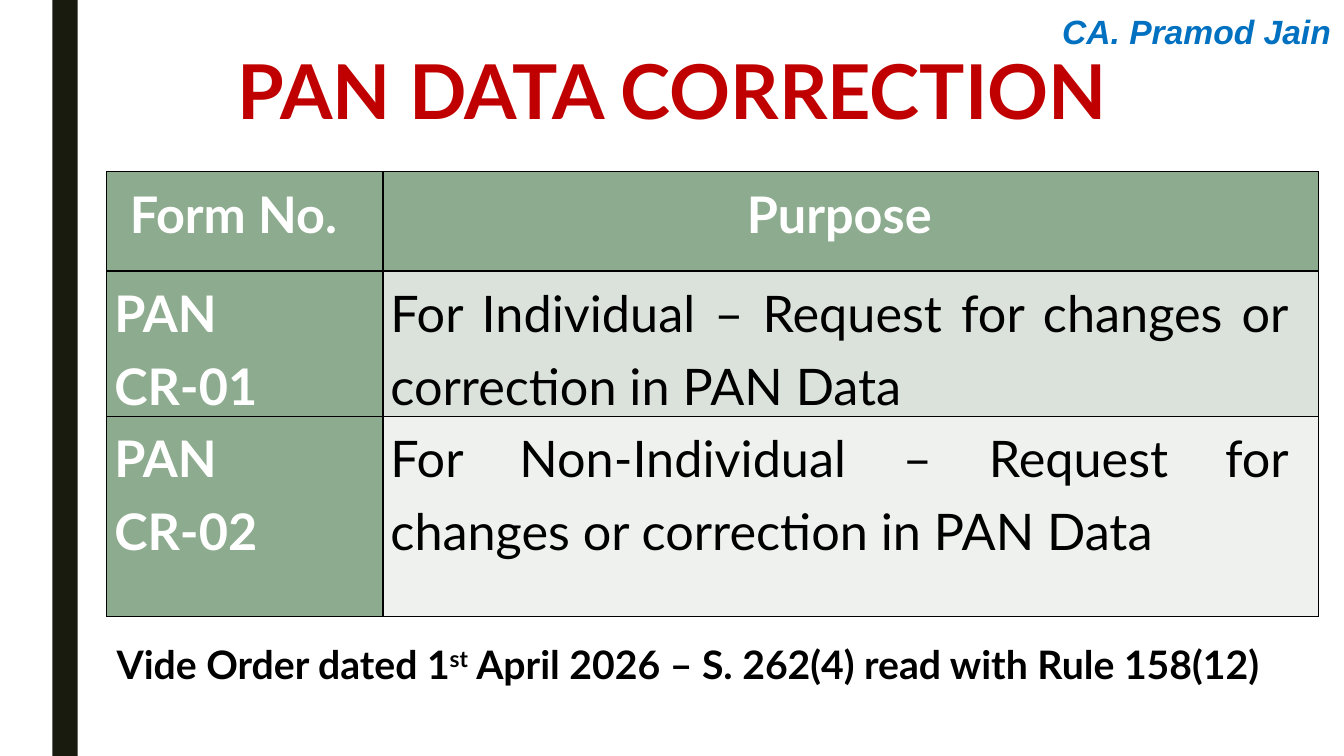
from lxml import etree
from pptx import Presentation
from pptx.dml.color import RGBColor
from pptx.enum.shapes import MSO_SHAPE
from pptx.enum.text import MSO_ANCHOR, PP_ALIGN
from pptx.oxml.ns import qn
from pptx.util import Cm, Pt

RECTANGLE = MSO_SHAPE.RECTANGLE
TOP, MIDDLE = MSO_ANCHOR.TOP, MSO_ANCHOR.MIDDLE
LEFT, CENTER = PP_ALIGN.LEFT, PP_ALIGN.CENTER
RIGHT, JUSTIFY = PP_ALIGN.RIGHT, PP_ALIGN.JUSTIFY

BLACK = RGBColor(0x00, 0x00, 0x00)
WHITE = RGBColor(0xFF, 0xFF, 0xFF)
DARK_OLIVE = RGBColor(0x19, 0x1B, 0x0E)
BLUE = RGBColor(0x00, 0x70, 0xC0)
RED = RGBColor(0xC0, 0x00, 0x00)
GREEN = RGBColor(0x8D, 0xAB, 0x8E)
BAND_COLORS = [RGBColor(0xDB, 0xE2, 0xDB), RGBColor(0xEE, 0xF1, 0xEE)]

FORMS = [
    ("Form No.", "Purpose"),
    ("PAN CR-01", "For Individual – Request for changes or correction in PAN Data"),
    ("PAN CR-02", "For Non-Individual – Request for changes or correction in PAN Data"),
]
COLUMN_WIDTHS = [Cm(6.96), Cm(23.57)]
ROW_HEIGHTS = [Cm(2.51), Cm(3.12), Cm(5.05)]


def add_run(paragraph, text, size, color, font="Lato", bold=True, italic=False):
    run = paragraph.add_run()
    run.text = text
    run.font.name = font
    run.font.size = Pt(size)
    run.font.bold = bold
    run.font.italic = italic
    run.font.color.rgb = color
    return run


def place(shape, left, top, width, height):
    shape.left, shape.top, shape.width, shape.height = left, top, width, height


def first_paragraph(shape, alignment, anchor=TOP):
    frame = shape.text_frame
    frame.word_wrap = True
    frame.vertical_anchor = anchor
    paragraph = frame.paragraphs[0]
    paragraph.alignment = alignment
    return paragraph


def add_side_bar(slide, height):
    bar = slide.shapes.add_shape(RECTANGLE, Cm(1.32), 0, Cm(0.64), height)
    bar.shadow.inherit = False
    bar.fill.solid()
    bar.fill.fore_color.rgb = DARK_OLIVE
    bar.line.fill.background()


def set_borders(cell, color, width):
    properties = cell._tc.get_or_add_tcPr()
    for index, side in enumerate(("lnL", "lnR", "lnT", "lnB")):
        line = etree.Element(qn(f"a:{side}"), w=str(width))
        fill = etree.SubElement(line, qn("a:solidFill"))
        etree.SubElement(fill, qn("a:srgbClr"), val=str(color))
        properties.insert(index, line)


def fill_cell(cell, text, alignment, background, color, bold):
    cell.margin_left, cell.margin_right = Cm(0.19), Cm(0.76)
    cell.margin_top = cell.margin_bottom = 0
    cell.fill.solid()
    cell.fill.fore_color.rgb = background
    set_borders(cell, BLACK, Pt(1))
    paragraph = cell.text_frame.paragraphs[0]
    paragraph.alignment = alignment
    paragraph.line_spacing = 1.2
    paragraph.space_after = Pt(1)
    add_run(paragraph, text, 36, color, bold=bold)


def add_forms_table(slide):
    table = slide.shapes.add_table(
        len(FORMS), len(COLUMN_WIDTHS), Cm(2.69), Cm(4.32),
        sum(COLUMN_WIDTHS), sum(ROW_HEIGHTS)).table
    for column, width in zip(table.columns, COLUMN_WIDTHS):
        column.width = width
    for row_index, texts in enumerate(FORMS):
        table.rows[row_index].height = ROW_HEIGHTS[row_index]
        alignment = JUSTIFY if row_index else CENTER
        for column_index, text in enumerate(texts):
            is_body = row_index > 0 and column_index > 0
            background = BAND_COLORS[row_index - 1] if is_body else GREEN
            color = BLACK if is_body else WHITE
            fill_cell(table.cell(row_index, column_index), text, alignment,
                      background, color, not is_body)


def main():
    presentation = Presentation()
    presentation.slide_width, presentation.slide_height = Cm(33.87), Cm(19.05)
    slide = presentation.slides.add_slide(presentation.slide_layouts[5])
    add_side_bar(slide, presentation.slide_height)

    # Author
    author = slide.shapes.add_textbox(Cm(25.1), Cm(0.15), Cm(8.69), Cm(1.07))
    add_run(first_paragraph(author, RIGHT), "CA. Pramod Jain", 24, BLUE,
            font="Arial", italic=True)

    # Title
    title = slide.shapes.title
    place(title, Cm(4.24), Cm(1.07), Cm(25.4), Cm(2.34))
    add_run(first_paragraph(title, CENTER, MIDDLE), "PAN DATA CORRECTION", 54, RED)

    add_forms_table(slide)

    # Legal reference
    reference = slide.shapes.add_textbox(Cm(2.69), Cm(16), Cm(30.53), Cm(1.45))
    paragraph = first_paragraph(reference, LEFT)
    add_run(paragraph, "Vide Order dated 1", 28, BLACK)
    ordinal = add_run(paragraph, "st", 28, BLACK)
    ordinal.font._element.set("baseline", "30000")
    add_run(paragraph, " April 2026 – S. 262(4) read with Rule 158(12)", 28, BLACK)

    presentation.save("out.pptx")


if __name__ == "__main__":
    main()
